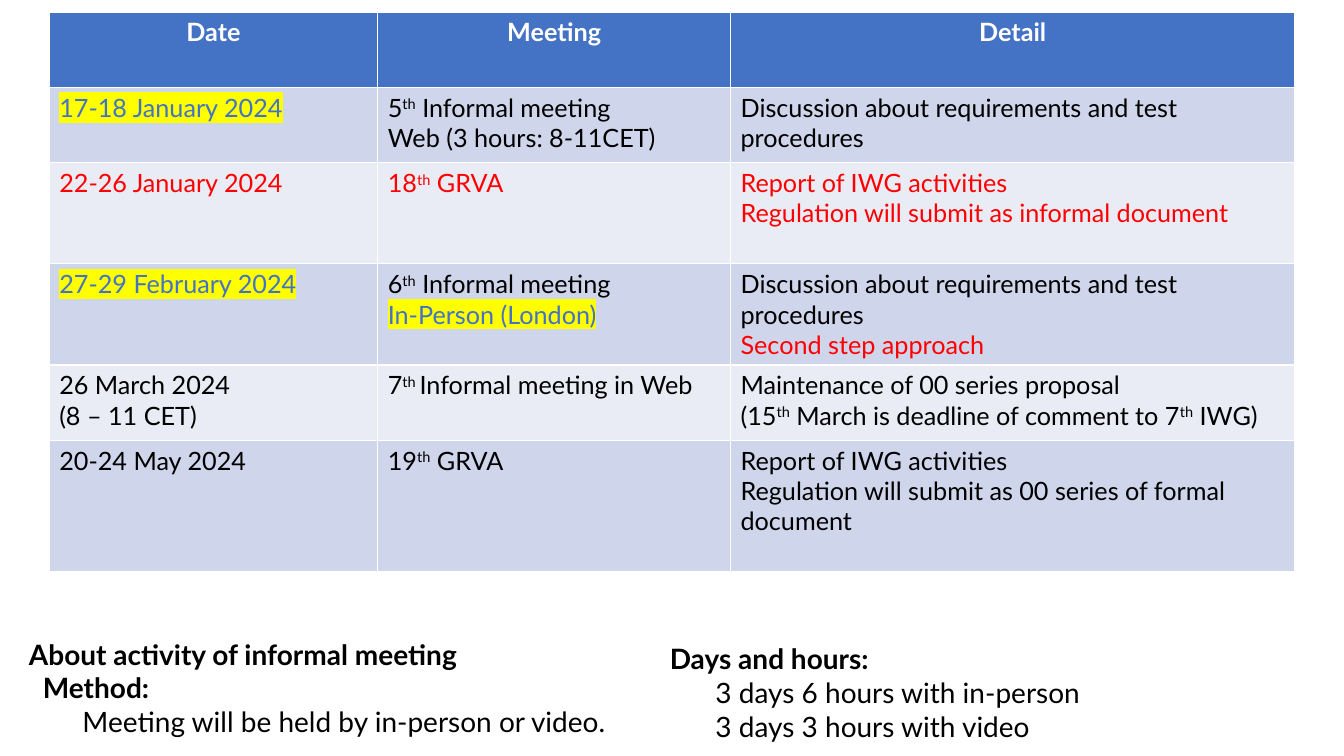
from dataclasses import dataclass

from lxml import etree
from pptx import Presentation
from pptx.dml.color import RGBColor
from pptx.enum.text import MSO_AUTO_SIZE, PP_ALIGN
from pptx.oxml.ns import qn
from pptx.util import Cm, Pt

CENTER, LEFT = PP_ALIGN.CENTER, PP_ALIGN.LEFT
FIT_SHAPE = MSO_AUTO_SIZE.SHAPE_TO_FIT_TEXT


@dataclass(frozen=True)
class Theme:
    font: str = "Lato"
    table_size: int = 18
    note_size: int = 20
    black: str = "000000"
    white: str = "FFFFFF"
    red: str = "FF0000"
    blue: str = "4472C4"
    yellow: str = "FFFF00"
    bands: tuple = ("CFD5EA", "E9EBF5")


THEME = Theme()
STYLES = {
    "head": {"color": THEME.white, "bold": True},
    "plain": {"color": THEME.black},
    "red": {"color": THEME.red},
    "marked": {"color": THEME.blue, "highlight": THEME.yellow},
    "bold": {"color": THEME.black, "bold": True},
}

# A paragraph is (text, style); text between carets is superscript.
HEADER = ["Date", "Meeting", "Detail"]
MEETINGS = [
    ([("17-18 January 2024", "marked")],
     [("5^th^ Informal meeting", "plain"), ("Web (3 hours: 8-11CET)", "plain")],
     [("Discussion about requirements and test procedures", "plain")]),
    ([("22-26 January 2024", "red")],
     [("18^th^ GRVA", "red")],
     [("Report of IWG activities", "red"),
      ("Regulation will submit as informal document", "red")]),
    ([("27-29 February 2024", "marked")],
     [("6^th^ Informal meeting", "plain"), ("In-Person (London)", "marked")],
     [("Discussion about requirements and test procedures", "plain"),
      ("Second step approach", "red")]),
    ([("26 March 2024", "plain"), ("(8 – 11 CET)", "plain")],
     [("7^th ^Informal meeting in Web", "plain")],
     [("Maintenance of 00 series proposal", "plain"),
      ("(15^th^ March is deadline of comment to 7^th^ IWG)", "plain")]),
    ([("20-24 May 2024", "plain")],
     [("19^th^ GRVA", "plain")],
     [("Report of IWG activities", "plain"),
      ("Regulation will submit as 00 series of formal document", "plain")]),
]
COLUMN_WIDTHS = [8.28, 8.89, 14.22]
ROW_HEIGHTS = [1.9, 1.9, 2.55, 2.55, 1.9, 3.3]

# Each note: left, top, width, then lines of (text, style, indent).
NOTES = [
    (0.48, 15.93, 15.98, [
        ("About activity of informal meeting", "bold", 0),
        ("Method:", "bold", 0.35),
        ("Meeting will be held by in-person or video.", "plain", 1.35)]),
    (16.43, 16.05, 16.92, [
        ("Days and hours:", "bold", 0.2),
        ("3 days 6 hours with in-person", "plain", 1.35),
        ("3 days 3 hours with video", "plain", 1.35)]),
]
NOTE_HEIGHT = 2.82


def rgb(code):
    return RGBColor.from_string(code)


def add_highlight(r, color):
    highlight = etree.Element(qn("a:highlight"))
    etree.SubElement(highlight, qn("a:srgbClr"), val=color)
    r.font._element.find(qn("a:solidFill")).addnext(highlight)


def add_runs(p, text, style, size):
    look = STYLES[style]
    font_values = {"name": THEME.font, "size": Pt(size), "bold": look.get("bold", False)}
    for i, piece in enumerate(text.split("^")):
        r = p.add_run()
        r.text = piece
        for name, value in font_values.items():
            setattr(r.font, name, value)
        r.font.color.rgb = rgb(look["color"])
        if "highlight" in look:
            add_highlight(r, look["highlight"])
        if i % 2:
            r.font._element.set("baseline", "30000")


def paragraphs(tf, count):
    """Return count paragraphs, the first being the one already there."""
    return [tf.paragraphs[0]] + [tf.add_paragraph() for _ in range(count - 1)]


def fill_cell(cell, lines, fill, align):
    cell.fill.solid()
    cell.fill.fore_color.rgb = rgb(fill)
    for p, (text, style) in zip(paragraphs(cell.text_frame, len(lines)), lines):
        p.alignment = align
        add_runs(p, text, style, THEME.table_size)


def add_schedule(s):
    rows = [[[(title, "head")] for title in HEADER], *MEETINGS]
    table = s.shapes.add_table(
        len(rows), len(HEADER), Cm(1.24), Cm(0.3),
        Cm(sum(COLUMN_WIDTHS)), Cm(sum(ROW_HEIGHTS))).table
    for column, width in zip(table.columns, COLUMN_WIDTHS):
        column.width = Cm(width)
    for i, (row, height, cells) in enumerate(zip(table.rows, ROW_HEIGHTS, rows)):
        row.height = Cm(height)
        fill = THEME.bands[(i - 1) % 2] if i else THEME.blue
        for cell, lines in zip(row.cells, cells):
            fill_cell(cell, lines, fill, LEFT if i else CENTER)


def add_note(s, left, top, width, lines):
    tf = s.shapes.add_textbox(Cm(left), Cm(top), Cm(width), Cm(NOTE_HEIGHT)).text_frame
    tf.word_wrap = True
    tf.auto_size = FIT_SHAPE
    for p, (text, style, indent) in zip(paragraphs(tf, len(lines)), lines):
        p._p.get_or_add_pPr().set("marL", str(Cm(indent)))
        add_runs(p, text, style, THEME.note_size)


def main():
    prs = Presentation()
    prs.slide_width, prs.slide_height = Cm(33.87), Cm(19.05)
    s = prs.slides.add_slide(prs.slide_layouts[6])
    add_schedule(s)
    for note in NOTES:
        add_note(s, *note)
    prs.save("out.pptx")


if __name__ == "__main__":
    main()
